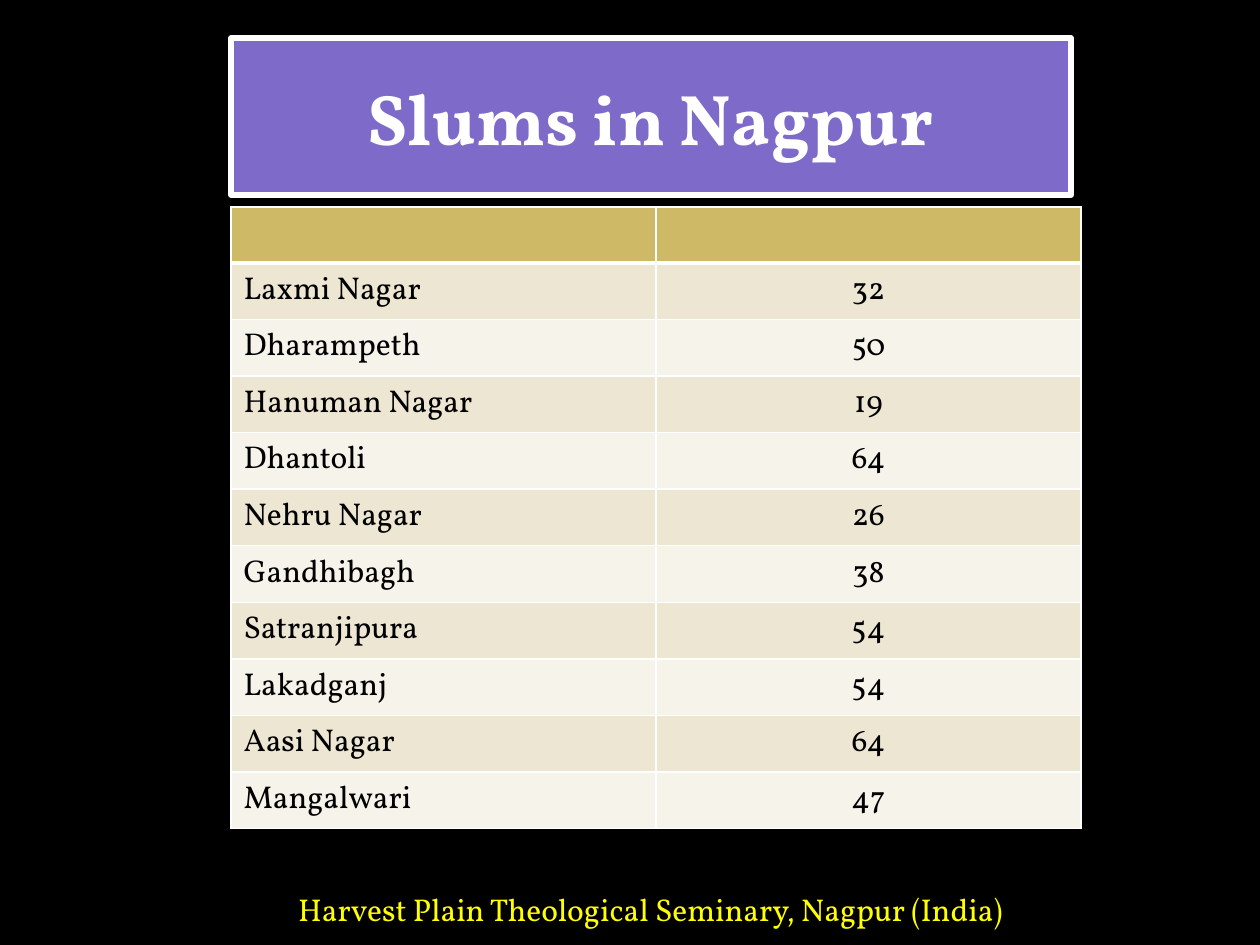
from lxml import etree
from pptx import Presentation
from pptx.dml.color import RGBColor
from pptx.enum.text import MSO_ANCHOR, MSO_AUTO_SIZE, PP_ALIGN
from pptx.oxml.ns import qn
from pptx.util import Emu, Pt

LEFT, CENTER = PP_ALIGN.LEFT, PP_ALIGN.CENTER
MIDDLE, BOTTOM = MSO_ANCHOR.MIDDLE, MSO_ANCHOR.BOTTOM
NO_FIT = MSO_AUTO_SIZE.NONE

PX = 914400 / 126
FONT = "Vollkorn"
TITLE_ONLY = 5

BLACK = RGBColor(0x00, 0x00, 0x00)
WHITE = RGBColor(0xFF, 0xFF, 0xFF)
PURPLE = RGBColor(0x7E, 0x6B, 0xC9)
GOLD = RGBColor(0xCE, 0xB9, 0x66)
SAND = RGBColor(0xED, 0xE6, 0xD3)
CREAM = RGBColor(0xF6, 0xF3, 0xEA)
YELLOW = RGBColor(0xFF, 0xFF, 0x00)

SLUMS = [
    ("Laxmi Nagar", 32),
    ("Dharampeth", 50),
    ("Hanuman Nagar", 19),
    ("Dhantoli", 64),
    ("Nehru Nagar", 26),
    ("Gandhibagh", 38),
    ("Satranjipura", 54),
    ("Lakadganj", 54),
    ("Aasi Nagar", 64),
    ("Mangalwari", 47),
]


def px(length):
    return Emu(round(length * PX))


def write_text(frame, text, *, size=18, color=BLACK, bold=False, align=LEFT):
    para = frame.paragraphs[0]
    para.alignment = align
    span = para.add_run()
    span.text = text
    span.font.name = FONT
    span.font.size = Pt(size)
    span.font.bold = bold
    span.font.color.rgb = color


def add_title(page, text, left, top, width, height):
    title = page.shapes.title
    title.left, title.top = px(left), px(top)
    title.width, title.height = px(width), px(height)
    title.fill.solid()
    title.fill.fore_color.rgb = PURPLE
    title.line.color.rgb = WHITE
    title.line.width = Pt(3)
    title.shadow.inherit = False
    frame = title.text_frame
    frame.auto_size = NO_FIT
    frame.vertical_anchor = MIDDLE
    write_text(frame, text, size=41, color=WHITE, bold=True, align=CENTER)


def add_footer(page, text, left, top, width, height):
    box = page.shapes.add_textbox(px(left), px(top), px(width), px(height))
    frame = box.text_frame
    frame.word_wrap = True
    frame.vertical_anchor = BOTTOM
    write_text(frame, text, color=YELLOW, align=CENTER)


def paint_cell(cell, color, bottom):
    properties = cell._tc.get_or_add_tcPr()
    for side, width in (("L", 1), ("R", 1), ("T", 1), ("B", bottom)):
        line = etree.SubElement(properties, qn(f"a:ln{side}"), w=str(Pt(width)))
        fill = etree.SubElement(line, qn("a:solidFill"))
        etree.SubElement(fill, qn("a:srgbClr"), val=str(WHITE))
    cell.fill.solid()
    cell.fill.fore_color.rgb = color


def add_slum_table(page, left, top, width, row_height):
    row_count = len(SLUMS) + 1
    table = page.shapes.add_table(
        row_count, 2, px(left), px(top), px(width), px(row_height * row_count)
    ).table
    for cell in table.rows[0].cells:
        paint_cell(cell, GOLD, bottom=3)
    for index, (name, count) in enumerate(SLUMS, start=1):
        name_cell, count_cell = table.rows[index].cells
        for cell in (name_cell, count_cell):
            paint_cell(cell, SAND if index % 2 else CREAM, bottom=1)
        write_text(name_cell.text_frame, name)
        write_text(count_cell.text_frame, str(count), align=CENTER)
    for row in table.rows:
        row.height = px(row_height)


def main():
    deck = Presentation()
    deck.slide_width, deck.slide_height = px(1260), px(945)
    page = deck.slides.add_slide(deck.slide_layouts[TITLE_ONLY])
    page.background.fill.solid()
    page.background.fill.fore_color.rgb = BLACK

    add_title(page, "Slums in Nagpur", 231, 38, 840, 157)
    add_slum_table(page, 231, 207, 850, 56)
    add_footer(
        page, "Harvest Plain Theological Seminary, Nagpur (India)", 262, 850, 777, 84
    )
    deck.save("out.pptx")


if __name__ == "__main__":
    main()
